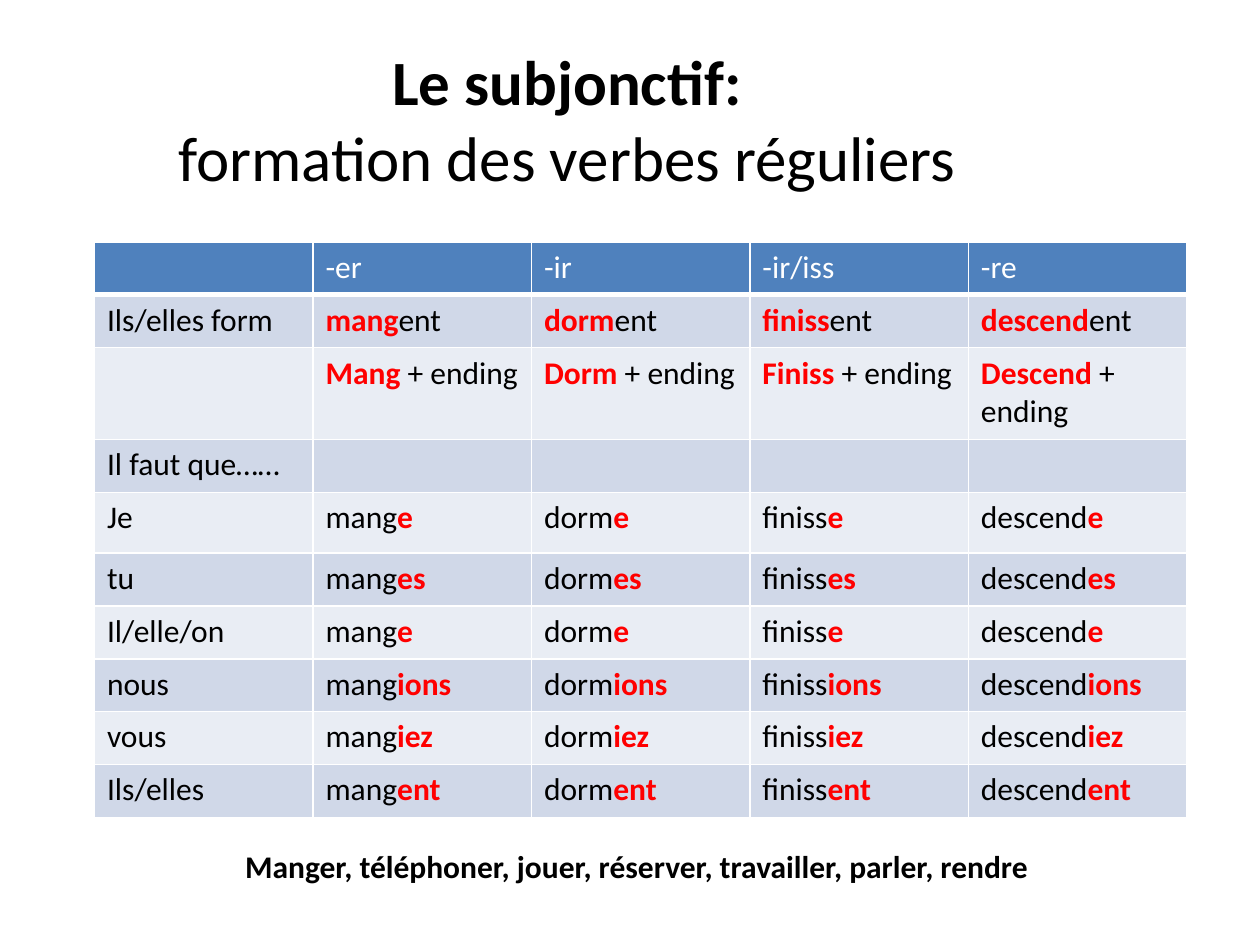
from lxml import etree
from pptx import Presentation
from pptx.dml.color import RGBColor
from pptx.enum.text import MSO_ANCHOR, PP_ALIGN
from pptx.oxml.ns import qn
from pptx.util import Inches, Pt

CENTER = PP_ALIGN.CENTER
MIDDLE = MSO_ANCHOR.MIDDLE
TOP = MSO_ANCHOR.TOP

FONT = "Calibri"
BLACK = RGBColor(0x00, 0x00, 0x00)
WHITE = RGBColor(0xFF, 0xFF, 0xFF)
RED = RGBColor(0xFF, 0x00, 0x00)
HEADER_BLUE = RGBColor(0x4F, 0x81, 0xBD)
BAND_DARK = RGBColor(0xD0, 0xD8, 0xE8)
BAND_LIGHT = RGBColor(0xE9, 0xED, 0xF4)

GROUPS = ["-er", "-ir", "-ir/iss", "-re"]
STEMS = ["mang", "dorm", "finiss", "descend"]
ENDINGS = [("Je", "e"), ("tu", "es"), ("Il/elle/on", "e"),
           ("nous", "ions"), ("vous", "iez"), ("Ils/elles", "ent")]
COLUMN_WIDTH = 8.67 / 5
ROW_HEIGHT = 0.42
TALL_ROWS = {2: 0.73, 4: 0.48}


def add_run(paragraph, text, size=18, color=BLACK, bold=False):
    run = paragraph.add_run()
    run.text = text
    run.font.name = FONT
    run.font.size = Pt(size)
    run.font.bold = bold
    run.font.color.rgb = color


def add_centered_text(slide, left, top, width, height, anchor):
    box = slide.shapes.add_textbox(Inches(left), Inches(top), Inches(width), Inches(height))
    box.text_frame.word_wrap = True
    box.text_frame.vertical_anchor = anchor
    paragraph = box.text_frame.paragraphs[0]
    paragraph.alignment = CENTER
    return paragraph


def set_borders(cell, bottom_width):
    properties = cell._tc.get_or_add_tcPr()
    for side, width in (("L", 1), ("R", 1), ("T", 1), ("B", bottom_width)):
        line = etree.SubElement(properties, qn(f"a:ln{side}"), w=str(Pt(width)))
        fill = etree.SubElement(line, qn("a:solidFill"))
        etree.SubElement(fill, qn("a:srgbClr"), val=str(WHITE))


def conjugation_rows():
    """Each cell is a list of (text, highlighted) pieces."""
    def label(text):
        return [(text, False)]

    rows = [
        [[]] + [label(group) for group in GROUPS],
        [label("Ils/elles form")] + [[(stem, True), ("ent", False)] for stem in STEMS],
        [[]] + [[(stem.capitalize(), True), (" + ending", False)] for stem in STEMS],
        [label("Il faut que……")] + [[] for _ in STEMS],
    ]
    for pronoun, ending in ENDINGS:
        rows.append([label(pronoun)] + [[(stem, False), (ending, True)] for stem in STEMS])
    return rows


def add_conjugation_table(slide):
    rows = conjugation_rows()
    heights = [TALL_ROWS.get(index, ROW_HEIGHT) for index in range(len(rows))]
    columns = len(rows[0])
    table = slide.shapes.add_table(
        len(rows), columns, Inches(0.75), Inches(1.92),
        Inches(COLUMN_WIDTH * columns), Inches(sum(heights))).table
    for column in table.columns:
        column.width = Inches(COLUMN_WIDTH)

    for row_index, pieces_by_cell in enumerate(rows):
        table.rows[row_index].height = Inches(heights[row_index])
        is_header = row_index == 0
        band = HEADER_BLUE if is_header else (BAND_LIGHT, BAND_DARK)[row_index % 2]
        text_color = WHITE if is_header else BLACK
        for column_index, pieces in enumerate(pieces_by_cell):
            cell = table.cell(row_index, column_index)
            set_borders(cell, 3 if is_header else 1)
            cell.fill.solid()
            cell.fill.fore_color.rgb = band
            for text, highlighted in pieces:
                add_run(cell.text_frame.paragraphs[0], text,
                        color=RED if highlighted else text_color, bold=highlighted)


def main():
    presentation = Presentation()
    presentation.slide_width = Inches(10)
    presentation.slide_height = Inches(7.5)
    slide = presentation.slides.add_slide(presentation.slide_layouts[6])

    # Title
    title = add_centered_text(slide, 0, 0.3, 9, 1.28, MIDDLE)
    add_run(title, "Le subjonctif:", size=36, bold=True)
    title.add_line_break()
    add_run(title, "formation des verbes réguliers", size=36)

    # Conjugations
    add_conjugation_table(slide)

    # Practice verbs
    verbs = add_centered_text(slide, 0.77, 6.67, 8.57, 0.4, TOP)
    add_run(verbs, "Manger, téléphoner, jouer, réserver, travailler, parler, rendre", bold=True)

    presentation.save("out.pptx")


if __name__ == "__main__":
    main()
